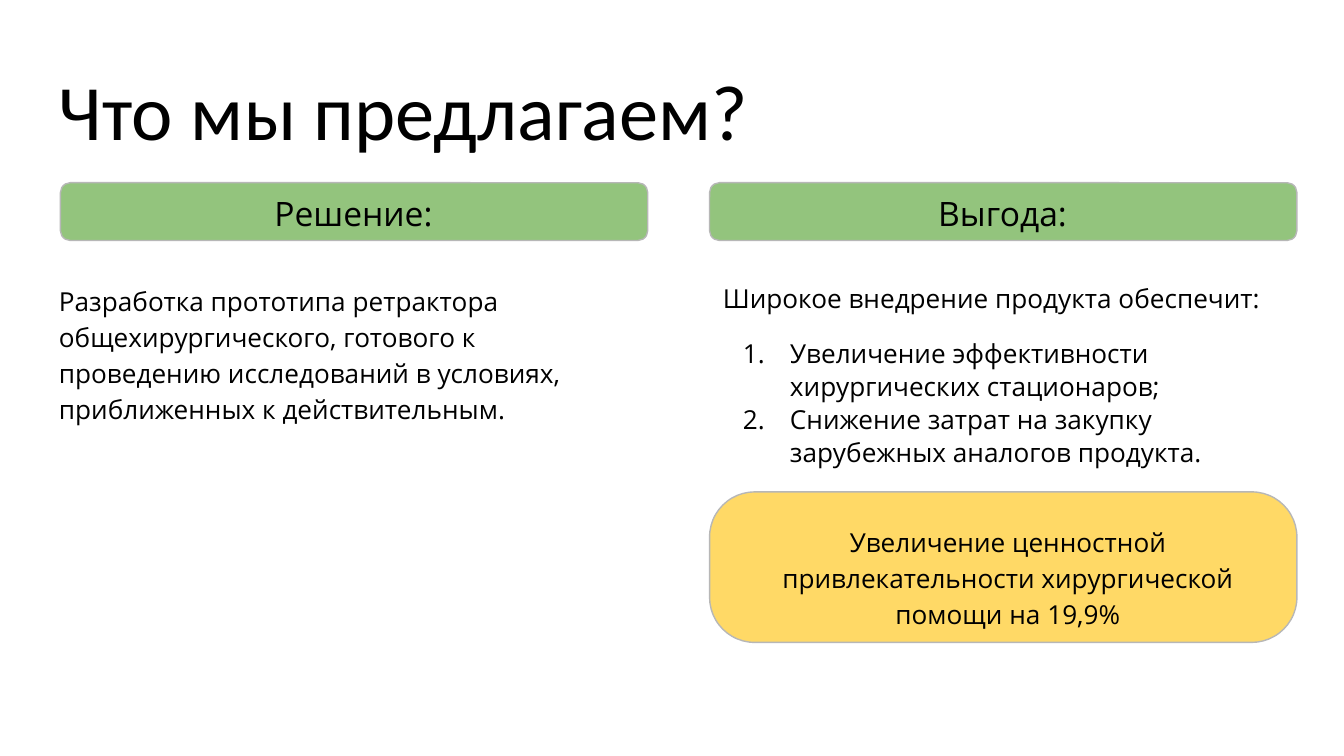
from lxml import etree
from pptx import Presentation
from pptx.dml.color import RGBColor
from pptx.enum.shapes import MSO_SHAPE
from pptx.enum.text import MSO_ANCHOR, PP_ALIGN
from pptx.oxml.ns import qn
from pptx.util import Inches, Pt

ROUNDED = MSO_SHAPE.ROUNDED_RECTANGLE
TOP, MIDDLE, BOTTOM = MSO_ANCHOR.TOP, MSO_ANCHOR.MIDDLE, MSO_ANCHOR.BOTTOM
LEFT, CENTER = PP_ALIGN.LEFT, PP_ALIGN.CENTER

BLACK = RGBColor(0x00, 0x00, 0x00)
GREEN = RGBColor(0x93, 0xC4, 0x7D)
YELLOW = RGBColor(0xFF, 0xD9, 0x66)
GRAY = RGBColor(0xB7, 0xB7, 0xB7)

BODY_FONT = "Open Sans"
SLIDE_WIDTH = 10
COLUMN_WIDTH = 4.37
RIGHT_COLUMN = 5.28
HEADINGS = [(0.45, "Решение:"), (RIGHT_COLUMN, "Выгода:")]
BENEFITS = [
    "Увеличение эффективности хирургических стационаров;",
    "Снижение затрат на закупку зарубежных аналогов продукта.",
]


def add_text(shapes, box, lines, size, font=BODY_FONT, anchor=TOP,
             align=LEFT, spacing=None, after=None):
    frame = shapes.add_textbox(*map(Inches, box)).text_frame
    frame.word_wrap = True
    frame.vertical_anchor = anchor
    frame.margin_left = frame.margin_right = Inches(0.1)
    frame.margin_top = frame.margin_bottom = Inches(0.1)
    frame.text = "\n".join(lines)
    for paragraph in frame.paragraphs:
        paragraph.alignment = align
        paragraph.line_spacing = spacing
        paragraph.space_after = after
        paragraph.font.size = Pt(size)
        paragraph.font.name = font
        paragraph.font.color.rgb = BLACK
    return frame


def number_items(paragraphs):
    for paragraph in paragraphs:
        properties = paragraph._p.get_or_add_pPr()
        properties.set("marL", str(Inches(0.5)))
        properties.set("indent", str(Inches(-0.35)))
        numbering = etree.Element(qn("a:buAutoNum"), type="arabicPeriod")
        properties.insert_element_before(numbering, "a:tabLst", "a:defRPr", "a:extLst")


def add_panel(shapes, box, fill, rounding):
    panel = shapes.add_shape(ROUNDED, *map(Inches, box))
    panel.adjustments[0] = rounding
    panel.shadow.inherit = False
    panel.fill.solid()
    panel.fill.fore_color.rgb = fill
    panel.line.color.rgb = GRAY
    panel.line.width = Pt(0.75)


def add_heading(slide, left, label):
    shapes = slide.shapes.add_group_shape().shapes
    add_panel(shapes, (left, 1.36, COLUMN_WIDTH, 0.43), GREEN, 0.17)
    add_text(shapes, (left + 0.1, 1.37, 4.16, 0.43), [label], 18,
             anchor=MIDDLE, align=CENTER)


def add_benefits(slide):
    frame = add_text(slide.shapes, (RIGHT_COLUMN, 1.99, COLUMN_WIDTH, 1.67),
                     ["Широкое внедрение продукта обеспечит:", *BENEFITS], 14,
                     spacing=1.05)
    items = frame.paragraphs[1:]
    items[0].space_before = Pt(12)
    number_items(items)


def add_result(slide):
    shapes = slide.shapes.add_group_shape().shapes
    add_panel(shapes, (RIGHT_COLUMN, 3.66, COLUMN_WIDTH, 1.12), YELLOW, 0.3)
    add_text(shapes, (5.47, 3.83, 4.06, 0.91),
             ["Увеличение ценностной привлекательности хирургической помощи на 19,9%"],
             14, anchor=MIDDLE, align=CENTER, spacing=1.15, after=Pt(12))


def main():
    presentation = Presentation()
    presentation.slide_width = Inches(SLIDE_WIDTH)
    presentation.slide_height = Inches(SLIDE_WIDTH * 9 / 16)
    slide = presentation.slides.add_slide(presentation.slide_layouts[6])

    add_text(slide.shapes, (0.34, 0.35, 9.32, 0.91), ["Что мы предлагаем?"], 42,
             font="Calibri", anchor=BOTTOM)
    add_text(slide.shapes, (0.34, 1.99, COLUMN_WIDTH, 3.02),
             ["Разработка прототипа ретрактора общехирургического, готового к "
              "проведению исследований в условиях, приближенных к действительным."],
             14, spacing=1.15, after=Pt(12))
    add_benefits(slide)
    for left, label in HEADINGS:
        add_heading(slide, left, label)
    add_result(slide)
    presentation.save("out.pptx")


if __name__ == "__main__":
    main()
